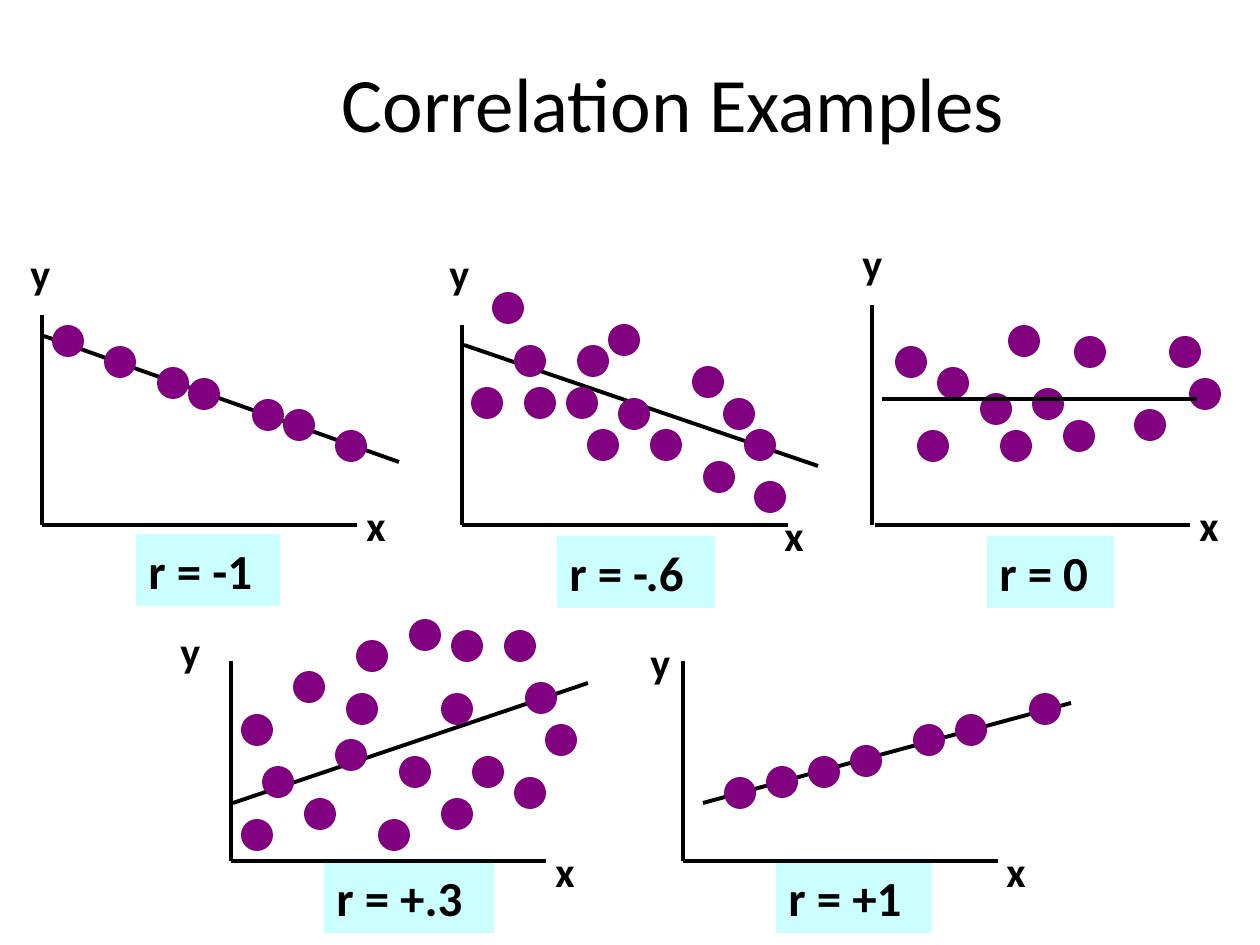
from dataclasses import dataclass

from lxml.etree import SubElement
from pptx import Presentation
from pptx.dml.color import RGBColor
from pptx.enum.shapes import MSO_CONNECTOR as Connector, MSO_SHAPE as Shape
from pptx.enum.text import MSO_ANCHOR as Anchor, PP_ALIGN as Align
from pptx.oxml.ns import qn
from pptx.util import Emu, Pt

PX = 914400 / 126
BLACK = RGBColor(0x00, 0x00, 0x00)
PURPLE = RGBColor(0x80, 0x00, 0x80)
PALE_CYAN = RGBColor(0xCC, 0xFF, 0xFF)

DOT = 32
LETTER_SIZE = (49, 63)
LABEL_HEIGHT = 72
TITLE_FONT = {"name": "Calibri", "size": Pt(44), "bold": False}
LETTER_FONT = {"name": "Calibri", "size": Pt(24), "bold": True}
LABEL_FONT = {"name": "Calibri", "size": Pt(28), "bold": True}


@dataclass
class Scatter:
    label: str
    label_box: tuple      # left, top, width
    y_axis: tuple         # x, top, bottom
    x_axis: tuple         # left, right
    y_letter: tuple
    x_letter: tuple
    trend: tuple          # x1, y1, x2, y2
    dots: list            # centres
    trend_in_front: bool = False


SCATTERS = [
    Scatter("r = -1", (136, 534, 144), (42, 315, 525), (42, 357), (18, 241), (354, 493),
            (44, 336, 399, 462),
            [(68, 341), (120, 362), (173, 383), (204, 394), (268, 415), (299, 425),
             (351, 446)]),
    Scatter("r = -.6", (557, 536, 158), (462, 325, 525), (462, 788), (437, 241), (772, 503),
            (464, 345, 818, 466),
            [(508, 308), (530, 361), (593, 361), (624, 340), (487, 403), (540, 403),
             (582, 403), (634, 414), (603, 445), (666, 445), (708, 382), (739, 414),
             (760, 445), (719, 477), (770, 497)]),
    Scatter("r = 0", (987, 536, 127), (872, 305, 525), (875, 1190), (850, 231), (1187, 493),
            (882, 399, 1197, 399),
            [(911, 362), (953, 383), (933, 446), (996, 409), (1016, 446), (1024, 341),
             (1048, 404), (1079, 436), (1090, 352), (1150, 425), (1185, 352), (1205, 394)],
            trend_in_front=True),
    Scatter("r = +1", (776, 861, 156), (683, 661, 861), (683, 998), (638, 630), (994, 839),
            (703, 803, 1071, 703),
            [(740, 793), (782, 782), (824, 772), (866, 761), (929, 740), (971, 730),
             (1045, 709)]),
    Scatter("r = +.3", (324, 861, 170), (231, 661, 861), (231, 546), (168, 619), (543, 839),
            (233, 803, 588, 683),
            [(257, 730), (257, 835), (278, 782), (309, 687), (320, 814), (351, 755),
             (362, 709), (372, 656), (394, 835), (415, 772), (425, 635), (457, 709),
             (457, 814), (467, 646), (488, 772), (520, 646), (530, 793), (541, 698),
             (561, 740)]),
]


def px(*lengths):
    return [Emu(round(length * PX)) for length in lengths]


def set_all(target, values):
    for name, value in values.items():
        setattr(target, name, value)


def write(frame, text, font):
    para = frame.paragraphs[0]
    span = para.add_run()
    span.text = text
    set_all(span.font, font)
    span.font.color.rgb = BLACK
    return para


def add_title(page, text):
    title = page.shapes.title
    geometry = px(136, 42, 1074, 136)
    set_all(title, dict(zip(("left", "top", "width", "height"), geometry)))
    title.text_frame.vertical_anchor = Anchor.MIDDLE
    para = write(title.text_frame, text, TITLE_FONT)
    set_all(para, {"alignment": Align.CENTER, "line_spacing": 0.8})


def add_line(shapes, ends, width=2):
    line = shapes.add_connector(Connector.STRAIGHT, *px(*ends))
    line.line.width = Pt(width)
    line.line.color.rgb = BLACK
    SubElement(line._element.spPr, qn("a:effectLst"))


def add_dot(shapes, x, y):
    dot = shapes.add_shape(Shape.OVAL, *px(x - DOT / 2, y - DOT / 2, DOT, DOT))
    dot.shadow.inherit = False
    dot.fill.solid()
    dot.fill.fore_color.rgb = PURPLE
    dot.line.fill.background()


def add_text(shapes, text, place, font, fill=None):
    box = shapes.add_textbox(*px(*place))
    box.text_frame.word_wrap = True
    if fill is not None:
        box.fill.solid()
        box.fill.fore_color.rgb = fill
    write(box.text_frame, text, font)


def add_scatter(page, scatter):
    shapes = page.shapes.add_group_shape().shapes
    add_text(shapes, scatter.label, (*scatter.label_box, LABEL_HEIGHT), LABEL_FONT, PALE_CYAN)

    # Axes and their letters
    x, top, bottom = scatter.y_axis
    left, right = scatter.x_axis
    add_line(shapes, (x, top, x, bottom))
    add_line(shapes, (left, bottom, right, bottom))
    add_text(shapes, "y", (*scatter.y_letter, *LETTER_SIZE), LETTER_FONT)
    add_text(shapes, "x", (*scatter.x_letter, *LETTER_SIZE), LETTER_FONT)

    # Points and trend line
    if not scatter.trend_in_front:
        add_line(shapes, scatter.trend, 2.25)
    for centre in scatter.dots:
        add_dot(shapes, *centre)
    if scatter.trend_in_front:
        add_line(shapes, scatter.trend)


def main():
    deck = Presentation()
    deck.slide_width, deck.slide_height = px(1260, 945)
    page = deck.slides.add_slide(deck.slide_layouts[5])
    add_title(page, "Correlation Examples")
    for scatter in SCATTERS:
        add_scatter(page, scatter)
    deck.save("out.pptx")


if __name__ == "__main__":
    main()
